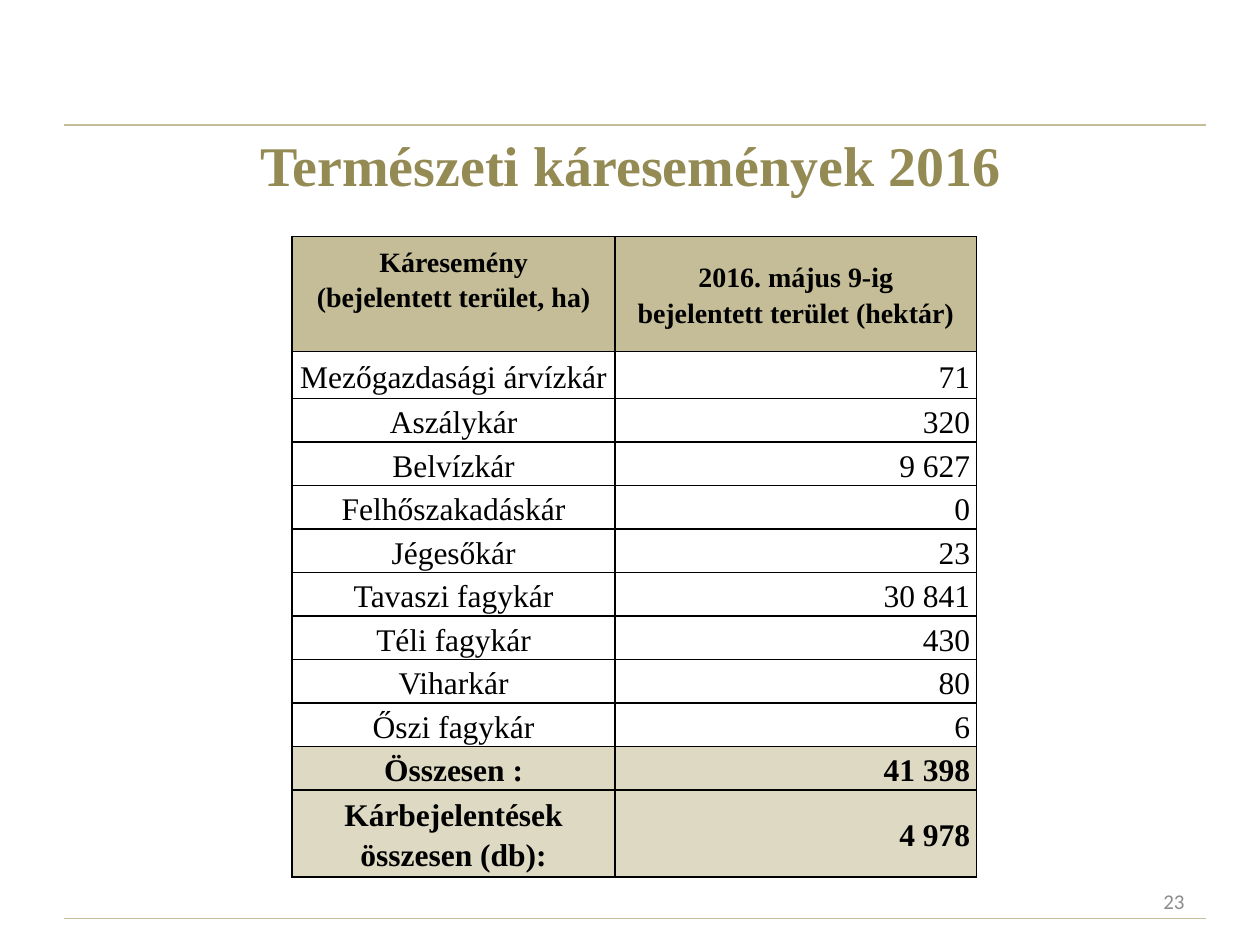
from lxml.etree import SubElement as Sub
from pptx import Presentation
from pptx.dml.color import RGBColor as Rgb
from pptx.enum.shapes import MSO_CONNECTOR as Conn
from pptx.enum.text import MSO_ANCHOR as Anchor, PP_ALIGN as Align
from pptx.oxml.ns import qn
from pptx.util import Pt

COLORS = {
    "title": "948A54", "rule": "C4BD97", "head": "C4BD97", "total": "DDD9C3",
    "ink": "000000", "page": "8C8C8C",
}
SERIF = "Times New Roman"
HEAD = (
    "Káresemény\n(bejelentett terület, ha)",
    "2016. május 9-ig\nbejelentett terület (hektár)",
)
DAMAGE = [
    ("Mezőgazdasági árvízkár", "71"),
    ("Aszálykár", "320"),
    ("Belvízkár", "9 627"),
    ("Felhőszakadáskár", "0"),
    ("Jégesőkár", "23"),
    ("Tavaszi fagykár", "30 841"),
    ("Téli fagykár", "430"),
    ("Viharkár", "80"),
    ("Őszi fagykár", "6"),
]
TOTALS = [
    ("Összesen :", "41 398"),
    ("Kárbejelentések összesen (db):", "4 978"),
]
COLS = (184.5, 206.5)
ROWS = [65.5, 27] + [24.85] * 9 + [45.5]


def color(name):
    return Rgb.from_string(COLORS[name])


def write(frame, text, size=18, ink="ink", font=SERIF, bold=False,
          align=Align.CENTER, gap=None):
    """Fill a text frame, one paragraph for each line of text."""
    frame.word_wrap = True
    for i, line in enumerate(text.split("\n")):
        para = frame.add_paragraph() if i else frame.paragraphs[0]
        para.alignment = align
        if gap:
            para.line_spacing = gap
        run = para.add_run()
        run.text = line
        run.font.size = Pt(size)
        run.font.name = font
        run.font.bold = bold
        run.font.color.rgb = color(ink)


def add_text(slide, text, x, y, w, h, **style):
    frame = slide.shapes.add_textbox(Pt(x), Pt(y), Pt(w), Pt(h)).text_frame
    frame.vertical_anchor = Anchor.MIDDLE
    write(frame, text, **style)


def add_rule(slide, y):
    line = slide.shapes.add_connector(
        Conn.STRAIGHT, Pt(36.5), Pt(y), Pt(689), Pt(y))
    line.line.color.rgb = color("rule")
    line.line.width = Pt(0.75)
    Sub(line._element.spPr, qn("a:effectLst"))


def set_fill(cell, fill):
    if fill:
        cell.fill.solid()
        cell.fill.fore_color.rgb = color(fill)
    else:
        cell.fill.background()


def add_edges(cell):
    """Draw all four borders; they must come before the fill."""
    props = cell._tc.get_or_add_tcPr()
    for side in ("lnL", "lnR", "lnT", "lnB"):
        edge = Sub(props, qn("a:" + side), w=str(Pt(1)))
        solid = Sub(edge, qn("a:solidFill"))
        Sub(solid, qn("a:srgbClr"), val=COLORS["ink"])


def set_cell(cell, text, fill=None, **style):
    cell.margin_left = cell.margin_right = Pt(3.6)
    cell.margin_top = cell.margin_bottom = 0
    cell.vertical_anchor = Anchor.MIDDLE
    add_edges(cell)
    set_fill(cell, fill)
    write(cell.text_frame, text, gap=1.15, **style)


def add_grid(slide):
    rows = [HEAD] + DAMAGE + TOTALS
    table = slide.shapes.add_table(
        len(rows), len(COLS), Pt(167), Pt(135.25),
        Pt(sum(COLS)), Pt(sum(ROWS))).table
    table.horz_banding = False
    for col, width in zip(table.columns, COLS):
        col.width = Pt(width)
    for row, height in zip(table.rows, ROWS):
        row.height = Pt(height)
    for r, pair in enumerate(rows):
        style = {}
        if r == 0:
            style = dict(fill="head", size=16, bold=True)
        elif r > len(DAMAGE):
            style = dict(fill="total", bold=True)
        for c, text in enumerate(pair):
            align = Align.RIGHT if r and c else Align.CENTER
            set_cell(table.cell(r, c), text, align=align, **style)
    table.cell(0, 0).margin_bottom = Pt(18)


def main():
    deck = Presentation()
    deck.slide_width, deck.slide_height = Pt(720), Pt(540)
    slide = deck.slides.add_slide(deck.slide_layouts[6])
    for y in (525, 71.5):
        add_rule(slide, y)
    add_text(slide, "Természeti káresemények 2016", 36.5, 77, 648, 34,
             size=32, ink="title", bold=True)
    add_grid(slide)
    add_text(slide, "23", 516, 500.5, 168, 28.75, size=12, ink="page",
             font="Calibri", align=Align.RIGHT)
    deck.save("out.pptx")


if __name__ == "__main__":
    main()
